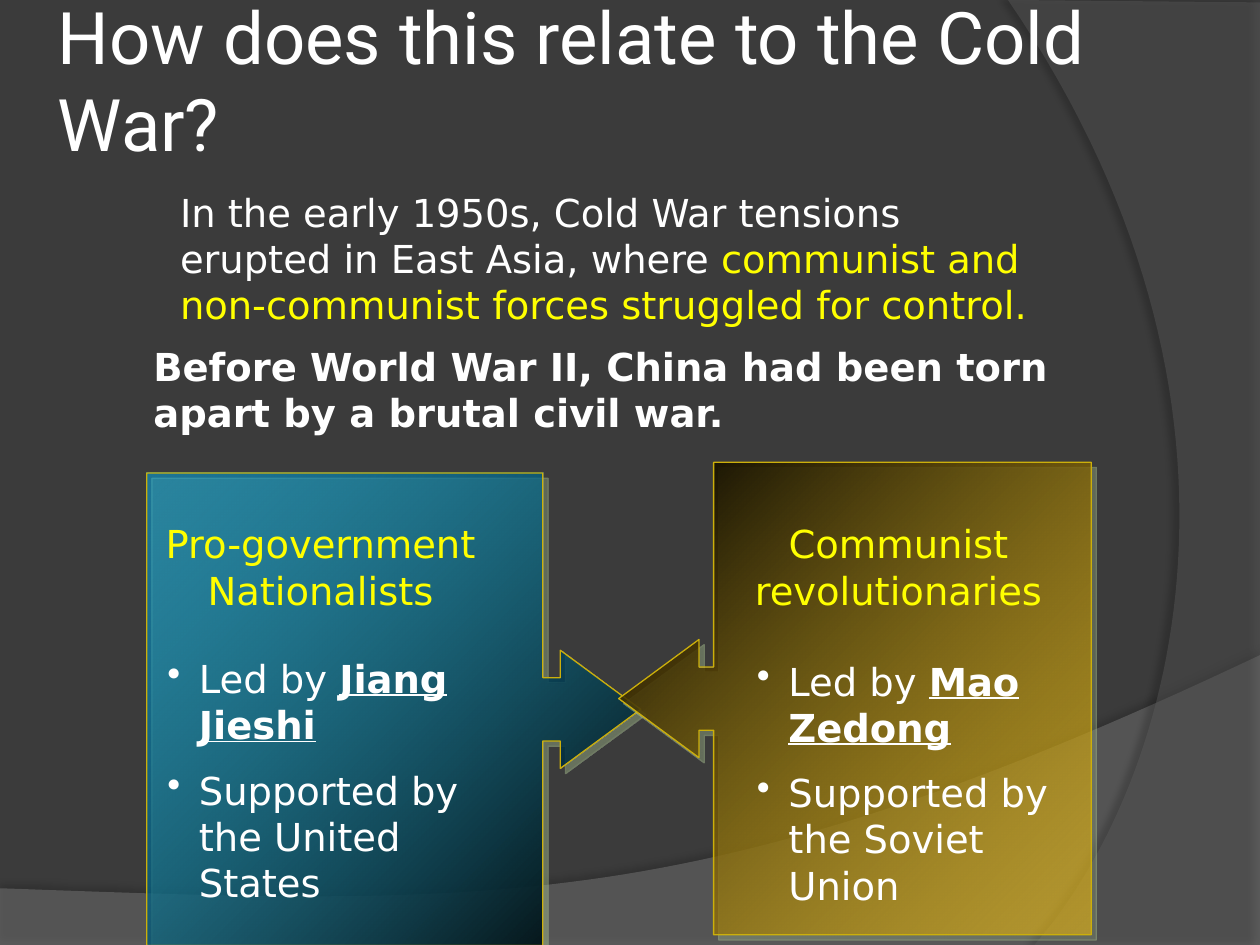
from dataclasses import dataclass, field
from typing import Any, NamedTuple

import pptx
import pptx.dml.color
import pptx.enum.shapes
import pptx.enum.text
import pptx.oxml
import pptx.oxml.ns
import pptx.util

Pt = pptx.util.Pt
RGB = pptx.dml.color.RGBColor.from_string
qn = pptx.oxml.ns.qn
Align = pptx.enum.text.PP_ALIGN


@dataclass(frozen=True)
class Theme:
    background: str = "3B3B3B"
    wave: str = "7F7F7F"
    arc: str = "5E5E5E"
    text: str = "FFFFFF"
    accent: str = "FFFF00"
    nationalist: str = "00B0F0"
    communist: str = "FFC000"
    dark: str = "000000"
    outline: str = "CCAF0A"
    glow: str = "ADC793"
    title_font: str = "Roboto"
    body_font: str = "DejaVu Sans"
    title_size: float = 41.4
    body_size: float = 22


THEME = Theme()
TITLE = {"name": THEME.title_font, "size": Pt(THEME.title_size)}
BODY = {"name": THEME.body_font, "size": Pt(THEME.body_size)}
LEADER = {**BODY, "bold": True, "underline": True}


class Box(NamedTuple):
    left: float
    top: float
    width: float
    height: float

    def emu(self) -> list[int]:
        return [Pt(length) for length in self]


class Shadow(NamedTuple):
    color: str
    alpha: int
    blur: float
    distance: float
    angle: int


class Run(NamedTuple):
    text: str
    color: str = THEME.text
    font: dict[str, Any] = BODY


@dataclass(frozen=True)
class Passage:
    box: Box
    paragraphs: list[list[Run]]
    paragraph_format: dict[str, Any] = field(default_factory=dict)
    frame_format: dict[str, Any] = field(default_factory=dict)
    bullet: bool = False


@dataclass(frozen=True)
class Swoosh:
    """A backdrop area: straight corners, then a Bezier curve from the last one."""
    corners: list[tuple[float, float]]
    curve: list[tuple[float, float]]
    color: str
    alpha: int
    shadow: Shadow


@dataclass(frozen=True)
class Side:
    """One party of the civil war, with its callout and its texts."""
    name: str
    leader: str
    backer: str
    color: str
    callout: Box
    rotation: int
    body_share: float
    heading: Box
    facts: Box


SWOOSHES = [
    Swoosh([(0, 507.6), (0, 540), (720, 540), (720, 374.4)],
           [(402.5, 524.9), (281.5, 517.7), (0, 507.6)],
           THEME.wave, 45, Shadow(THEME.dark, 35, 4, 3.5, 270)),
    Swoosh([(720, 1.4), (720, 540), (591.1, 540)],
           [(673.2, 445.7), (733, 229.7), (576, 0)],
           THEME.arc, 40, Shadow(THEME.dark, 45, 4, 4, 180)),
]
CALLOUT_SHADOW = Shadow(THEME.glow, 46, 0, 4.2, 45)

SIDES = [
    Side("Pro-government Nationalists", "Jiang Jieshi", "the United States",
         THEME.nationalist, Box(90, 264.2, 270, 282.2), 90, 0.802,
         Box(83.5, 293.8, 199.4, 60), Box(88.6, 370.8, 211, 154)),
    Side("Communist revolutionaries", "Mao Zedong", "the Soviet Union",
         THEME.communist, Box(353.5, 264.2, 270, 270), 270, 0.799,
         Box(419.8, 293.8, 187.2, 60), Box(425.5, 372.2, 211, 154)),
]

MARGINS = dict.fromkeys(
    ["margin_left", "margin_top", "margin_right", "margin_bottom"], Pt(3.6))
PASSAGES = [
    Passage(Box(29.5, 0, 648, 90),
            [[Run("How does this relate to the Cold War?", font=TITLE)]],
            frame_format={"vertical_anchor": pptx.enum.text.MSO_ANCHOR.MIDDLE, **MARGINS}),
    Passage(Box(95.8, 104.4, 504, 87),
            [[Run("In the early 1950s, Cold War tensions erupted in East Asia, where "),
              Run("communist and non-communist forces struggled for control.", THEME.accent)]]),
    Passage(Box(80.6, 192.2, 540, 60),
            [[Run("Before World War II, China had been torn apart by a brutal civil war.",
                  font={**BODY, "bold": True})]]),
]


def apply_format(target: Any, values: dict[str, Any]) -> None:
    for name, value in values.items():
        setattr(target, name, value)


def set_alpha(shape: Any, percent: int) -> None:
    """Make the first fill colour of the shape translucent."""
    color = next(shape._element.spPr.iter(qn("a:srgbClr")))
    pptx.oxml.ns  # namespace helpers come from here
    etree_alpha = color.makeelement(qn("a:alpha"), {"val": str(percent * 1000)})
    color.append(etree_alpha)


def cast_shadow(shape: Any, shadow: Shadow) -> None:
    shape.shadow.inherit = False
    shape._element.spPr.find(qn("a:effectLst")).append(pptx.oxml.parse_xml(
        f'<a:outerShdw {pptx.oxml.ns.nsdecls("a")} blurRad="{Pt(shadow.blur)}" '
        f'dist="{Pt(shadow.distance)}" dir="{shadow.angle * 60000}" algn="ctr" '
        f'rotWithShape="0"><a:srgbClr val="{shadow.color}">'
        f'<a:alpha val="{shadow.alpha * 1000}"/></a:srgbClr></a:outerShdw>'))


def bezier(points: list[tuple[float, float]], steps: int = 60) -> list[tuple[int, int]]:
    """Points along a cubic curve, without its start."""
    def blend(values: tuple[float, ...], t: float) -> int:
        a, b, c, d = values
        u = 1 - t
        return Pt(u**3 * a + 3 * u * u * t * b + 3 * u * t * t * c + t**3 * d)

    return [tuple(blend(axis, step / steps) for axis in zip(*points))
            for step in range(1, steps + 1)]


def draw_swoosh(slide: Any, swoosh: Swoosh) -> None:
    start, *corners = [(Pt(x), Pt(y)) for x, y in swoosh.corners]
    builder = slide.shapes.build_freeform(*start)
    builder.add_line_segments(corners + bezier([swoosh.corners[-1], *swoosh.curve]))
    area = builder.convert_to_shape()
    area.fill.solid()
    area.fill.fore_color.rgb = RGB(swoosh.color)
    area.line.fill.background()
    set_alpha(area, swoosh.alpha)
    cast_shadow(area, swoosh.shadow)


def draw_passage(slide: Any, passage: Passage) -> None:
    frame = slide.shapes.add_textbox(*passage.box.emu()).text_frame
    apply_format(frame, {"word_wrap": True, **passage.frame_format})
    for index, runs in enumerate(passage.paragraphs):
        paragraph = frame.add_paragraph() if index else frame.paragraphs[0]
        apply_format(paragraph, passage.paragraph_format)
        if passage.bullet:
            properties = paragraph._p.get_or_add_pPr()
            apply_indent = {"marL": str(Pt(18)), "indent": str(-Pt(18))}
            for name, value in apply_indent.items():
                properties.set(name, value)
            properties.append(properties.makeelement(qn("a:buChar"), {"char": "•"}))
        for piece in runs:
            run = paragraph.add_run()
            run.text = piece.text
            apply_format(run.font, piece.font)
            run.font.color.rgb = RGB(piece.color)


def draw_side(slide: Any, side: Side) -> None:
    callout = slide.shapes.add_shape(
        pptx.enum.shapes.MSO_SHAPE.UP_ARROW_CALLOUT, *side.callout.emu())
    callout.rotation = side.rotation
    callout._element.spPr.xfrm.set("flipH", "1")
    for index, value in enumerate([0.134, 0.125, 0.17, side.body_share]):
        callout.adjustments[index] = value
    callout.fill.gradient()
    callout.fill.gradient_angle = 135
    for stop, color in zip(callout.fill.gradient_stops, [side.color, THEME.dark]):
        stop.color.rgb = RGB(color)
    set_alpha(callout, 50)
    callout.line.color.rgb = RGB(THEME.outline)
    callout.line.width = Pt(0.75)
    cast_shadow(callout, CALLOUT_SHADOW)

    draw_passage(slide, Passage(side.heading, [[Run(side.name, THEME.accent)]],
                                {"alignment": Align.CENTER}))
    draw_passage(slide, Passage(
        side.facts,
        [[Run("Led by "), Run(side.leader, font=LEADER)], [Run(f"Supported by {side.backer}")]],
        {"space_after": Pt(THEME.body_size / 2)}, bullet=True))


def main() -> None:
    deck = pptx.Presentation()
    apply_format(deck, {"slide_width": Pt(720), "slide_height": Pt(540)})
    slide = deck.slides.add_slide(deck.slide_layouts[6])
    slide.background.fill.solid()
    slide.background.fill.fore_color.rgb = RGB(THEME.background)
    for swoosh in SWOOSHES:
        draw_swoosh(slide, swoosh)
    for passage in PASSAGES:
        draw_passage(slide, passage)
    for side in SIDES:
        draw_side(slide, side)
    deck.save("out.pptx")


if __name__ == "__main__":
    main()
